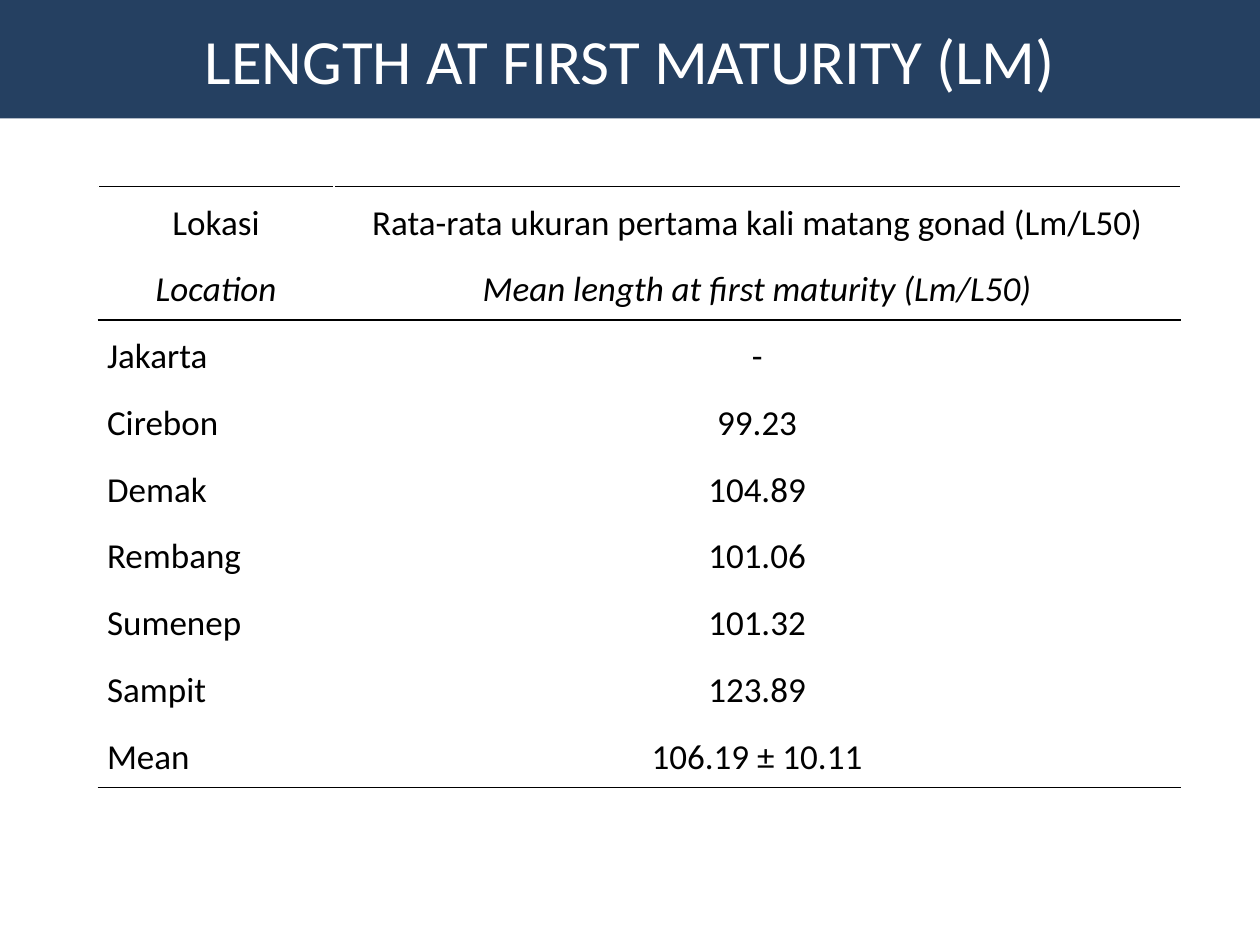
from lxml import etree
from pptx import Presentation
from pptx import util as u
from pptx.dml.color import RGBColor
from pptx.enum import shapes, text
from pptx.oxml import ns

COLORS = {"banner": "254061", "title": "FFFFFF", "ink": "000000"}
FONT = "Calibri"
HEADINGS = [
    ("Lokasi", "Rata-rata ukuran pertama kali matang gonad (Lm/L50)"),
    ("Location", "Mean length at first maturity (Lm/L50)"),
]
LENGTHS = [
    ("Jakarta", "-"),
    ("Cirebon", "99.23"),
    ("Demak", "104.89"),
    ("Rembang", "101.06"),
    ("Sumenep", "101.32"),
    ("Sampit", "123.89"),
    ("Mean", "106.19 ± 10.11"),
]


def style_paragraph(paragraph, size, color, align):
    paragraph.alignment = align
    paragraph.font.name = FONT
    paragraph.font.size = u.Pt(size)
    paragraph.font.color.rgb = RGBColor.from_string(COLORS[color])


def add_rule(cell, edge):
    """Draw a 1 pt line on the cell's edge: lnT (top) or lnB (bottom)."""
    properties = cell._tc.get_or_add_tcPr()
    line = etree.SubElement(properties, ns.qn(f"a:{edge}"), w=str(u.Pt(1)))
    fill = etree.SubElement(line, ns.qn("a:solidFill"))
    etree.SubElement(fill, ns.qn("a:srgbClr"), val=COLORS["ink"])


def add_banner(slide, left, top, width, height):
    banner = slide.shapes.add_shape(
        shapes.MSO_SHAPE.RECTANGLE, left, top, width, height)
    banner.shadow.inherit = False
    banner.fill.solid()
    banner.fill.fore_color.rgb = RGBColor.from_string(COLORS["banner"])
    banner.line.fill.background()
    frame = banner.text_frame
    frame.word_wrap = True
    frame.vertical_anchor = text.MSO_ANCHOR.MIDDLE
    frame.text = "LENGTH AT FIRST MATURITY (LM)"
    style_paragraph(frame.paragraphs[0], 36, "title", text.PP_ALIGN.CENTER)


def add_maturity_table(slide, left, top, width, height):
    rows = HEADINGS + LENGTHS
    table = slide.shapes.add_table(
        len(rows), 2, left, top, width, height).table
    table.first_row = table.horz_banding = False
    location_width = u.Inches(1.87)
    table.columns[0].width = location_width
    table.columns[1].width = width - location_width

    # Lines above and below the headings, and under the last row
    first_length = len(HEADINGS)
    rules = {0: "lnT", first_length - 1: "lnB",
             first_length: "lnT", len(rows) - 1: "lnB"}

    for r, row in enumerate(rows):
        for c, wording in enumerate(row):
            cell = table.cell(r, c)
            cell.margin_left = cell.margin_right = u.Inches(0.07)
            cell.margin_top = cell.margin_bottom = 0
            cell.vertical_anchor = text.MSO_ANCHOR.MIDDLE
            if r in rules:
                add_rule(cell, rules[r])
            cell.fill.background()
            cell.text = wording
            paragraph = cell.text_frame.paragraphs[0]
            is_place = c == 0 and r >= first_length
            style_paragraph(
                paragraph, 20, "ink",
                text.PP_ALIGN.LEFT if is_place else text.PP_ALIGN.CENTER)
            paragraph.line_spacing = 1.15
            # The English heading is in italics
            paragraph.font.italic = r == first_length - 1


def main():
    deck = Presentation()
    deck.slide_width, deck.slide_height = u.Inches(10), u.Inches(7.5)
    slide = deck.slides.add_slide(deck.slide_layouts[6])
    add_banner(slide, 0, 0, deck.slide_width, u.Inches(0.94))
    add_maturity_table(slide, u.Inches(0.78), u.Inches(1.48),
                       u.Inches(8.59), u.Inches(4.77))
    deck.save("out.pptx")


if __name__ == "__main__":
    main()
